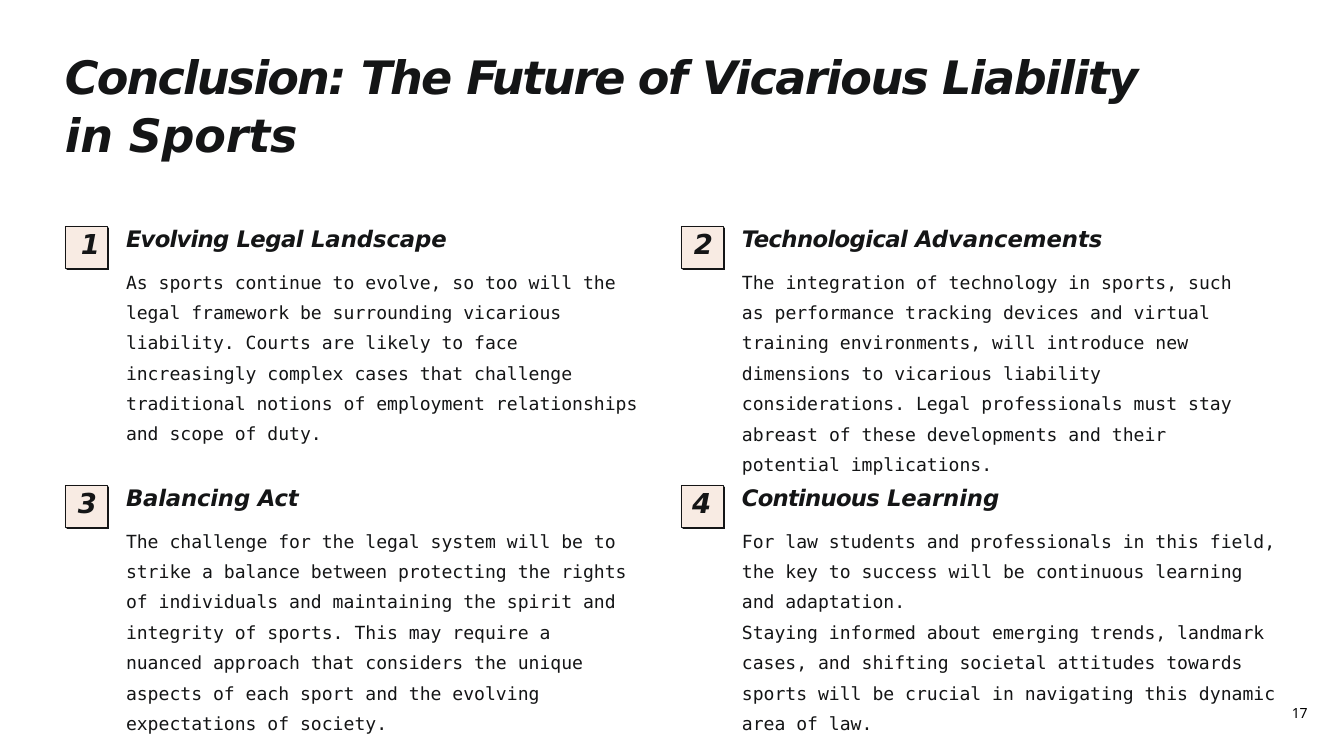
from pptx import Presentation
from pptx.dml.color import RGBColor
from pptx.enum.shapes import MSO_SHAPE
from pptx.enum.text import MSO_AUTO_SIZE
from pptx.util import Emu, Pt

RECTANGLE = MSO_SHAPE.RECTANGLE
GROW = MSO_AUTO_SIZE.SHAPE_TO_FIT_TEXT
SCALE = 914400 / 84
COLOURS = {"ink": "141516", "badge": "F8EBE3", "number": "000000"}
STYLES = {
    "title": dict(font="DejaVu Sans", size=39.5, colour="ink", bold=True, before=0.9, spacing=1.05),
    "badge": dict(font="DejaVu Sans", size=23.5, colour="ink", bold=True, before=1),
    "heading": dict(font="DejaVu Sans", size=19.5, colour="ink", bold=True, before=1.1),
    "body": dict(font="DejaVu Sans Mono", size=15.5, colour="ink", before=8.7, spacing=1.4),
    "follow": dict(font="DejaVu Sans Mono", size=15.5, colour="ink", before=0.1, spacing=1.4),
    "number": dict(font="Noto Sans", size=12, colour="number", before=1.8),
}
TITLE = [("Conclusion: ", -1.6), ("The ", -1.7), ("Future of ", -1.6),
         ("Vicarious Liability ", -1.3), ("in Sports", -0.2)]
LEFT, TOP, COLUMN_STEP, ROW_STEP, BADGE = 65, 226, 616, 259, 42
SHADOW = [(42, 1), (44, 2), (44, 44), (2, 44), (1, 42), (42, 42)]
POINTS = [
    dict(digit=("1", -8.1), digit_at=(15, 13), size=(517, 160),
         heading=[("Evolving ", -0.7), ("Legal ", -0.5), ("Landscape", -0.1)],
         body=["As sports continue to evolve, so too will the legal framework be surrounding "
               "vicarious liability. Courts are likely to face increasingly complex cases that "
               "challenge traditional notions of employment relationships and scope of duty."]),
    dict(digit=("2", -3.5), digit_at=(12, 18), size=(508, 222),
         heading=[("Technological ", -0.6), ("Advancements", -0.1)],
         body=["The integration of technology in sports, such as performance tracking devices "
               "and virtual training environments, will introduce new dimensions to vicarious "
               "liability considerations. Legal professionals must stay abreast of these "
               "developments and their potential implications."]),
    dict(digit=("3", -3.4), digit_at=(12, 18), size=(508, 222),
         heading=[("Balancing Act", -0.2)],
         body=["The challenge for the legal system will be to strike a balance between "
               "protecting the rights of individuals and maintaining the spirit and integrity "
               "of sports. This may require a nuanced approach that considers the unique "
               "aspects of each sport and the evolving expectations of society."]),
    dict(digit=("4", -0.5), digit_at=(10, 21), size=(536, 192),
         heading=[("Continuous ", -0.7), ("Learning", -0.1)],
         body=["For law students and professionals in this field, the key to success will be "
               "continuous learning and adaptation.",
               "Staying informed about emerging trends, landmark cases, and shifting societal "
               "attitudes towards sports will be crucial in navigating this dynamic area of law."]),
]


def px(length):
    """Turn pixels into EMU."""
    return Emu(round(length * SCALE))


def colour(name):
    """Look up a named colour."""
    return RGBColor.from_string(COLOURS[name])


class Page:
    """Draws the elements of one slide in a shared style."""

    def __init__(self, deck):
        """Add a blank slide to the deck."""
        self.slide = deck.slides.add_slide(deck.slide_layouts[6])
        self.shapes = self.slide.shapes

    def text(self, left, top, width, height, paragraphs, inset=(1, 1)):
        """Add a text box from (style name, spans) pairs."""
        box = self.shapes.add_textbox(px(left), px(top), px(width), px(height))
        frame = box.text_frame
        frame.word_wrap, frame.auto_size = True, GROW
        frame.margin_left, frame.margin_top = px(inset[0]), px(inset[1])
        frame.margin_right = frame.margin_bottom = 0
        for index, (style, spans) in enumerate(paragraphs):
            para = frame.add_paragraph() if index else frame.paragraphs[0]
            self.fill_paragraph(para, STYLES[style], spans)

    def fill_paragraph(self, para, style, spans):
        """Write the (text, letter spacing) spans of one paragraph."""
        para.space_before = Pt(style["before"])
        para.line_spacing = style.get("spacing")
        for text, tracking in spans:
            span = para.add_run()
            span.text = text
            font = span.font
            font.name, font.size = style["font"], Pt(style["size"])
            font.bold = font.italic = style.get("bold", False)
            font.color.rgb = colour(style["colour"])
            span._r.get_or_add_rPr().set("spc", str(round(tracking * 100)))

    def badge(self, left, top):
        """Add a square badge with a hard edge shadow."""
        corners = [(left + x, top + y) for x, y in SHADOW]
        builder = self.shapes.build_freeform(*corners[0], scale=SCALE)
        builder.add_line_segments(corners[1:], close=True)
        edge = builder.convert_to_shape()
        face = self.shapes.add_shape(RECTANGLE, px(left), px(top), px(BADGE), px(BADGE))
        for shape, fill in ((edge, "ink"), (face, "badge")):
            shape.shadow.inherit = False
            shape.fill.solid()
            shape.fill.fore_color.rgb = colour(fill)
        edge.line.fill.background()
        face.line.color.rgb = colour("ink")
        face.line.width = Pt(0.6)

    def point(self, left, top, point):
        """Add a numbered point with heading and body."""
        self.badge(left, top)
        shift, width = point["digit_at"]
        self.text(left + shift, top, width, 35, [("badge", [point["digit"]])])
        bodies = [(style, [(text, 0)]) for style, text in zip(("body", "follow"), point["body"])]
        self.text(left + 60, top - 2, *point["size"], [("heading", point["heading"]), *bodies])


def main():
    """Build and save the slide."""
    deck = Presentation()
    deck.slide_width, deck.slide_height = px(1344), px(756)
    page = Page(deck)
    page.text(64, 45, 1127, 118, [("title", TITLE)])
    for index, point in enumerate(POINTS):
        row, column = divmod(index, 2)
        page.point(LEFT + column * COLUMN_STEP, TOP + row * ROW_STEP, point)
    page.text(1289, 701, 24, 21, [("number", [("17", -0.2)])], inset=(3, 3))
    deck.save("out.pptx")


if __name__ == "__main__":
    main()
